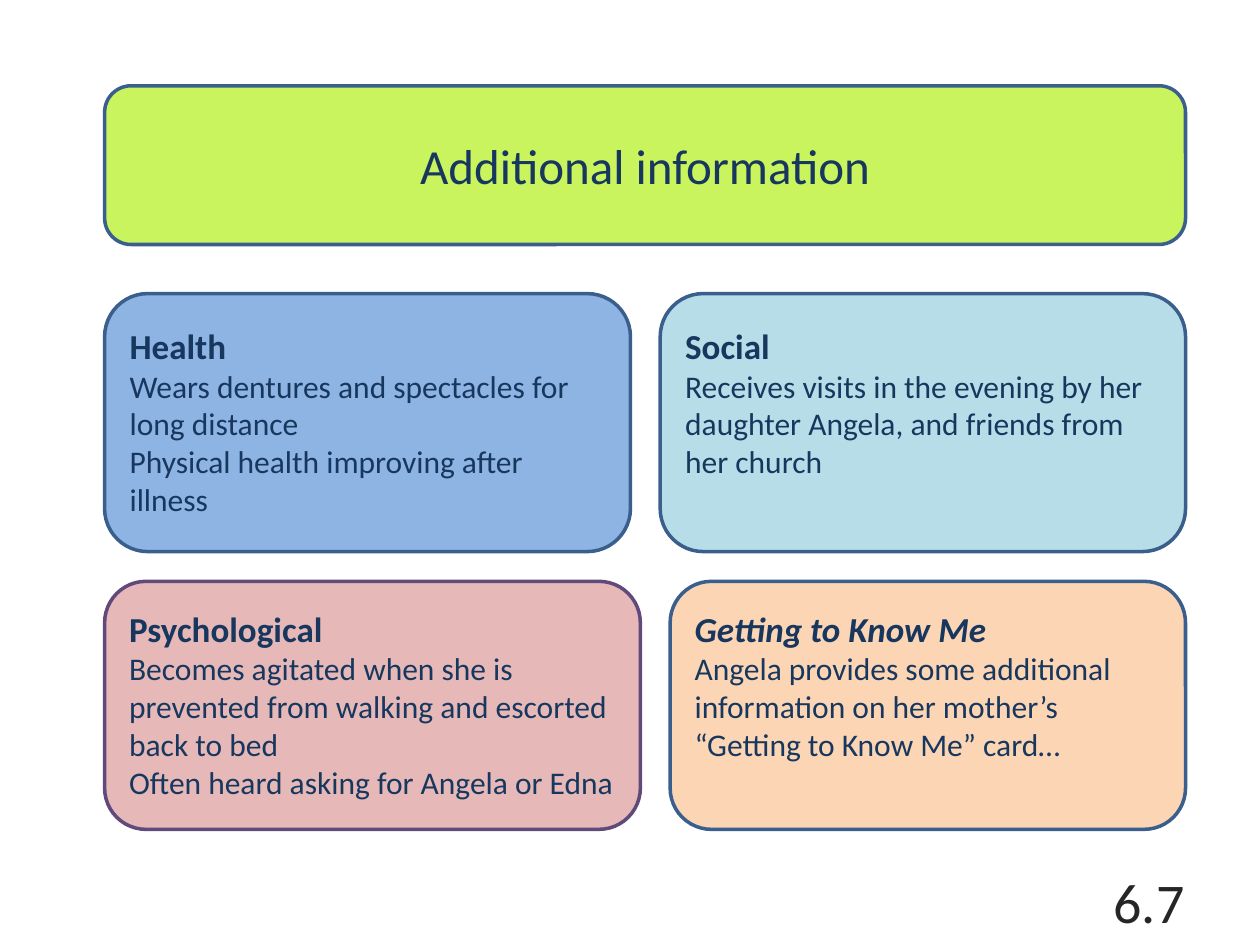
from pptx import Presentation
from pptx.dml.color import RGBColor
from pptx.enum.shapes import MSO_SHAPE
from pptx.enum.text import MSO_ANCHOR, PP_ALIGN
from pptx.util import Cm, Pt

COLORS = {
    "navy": "17375E", "outline": "3A5F8C", "purple": "604A7B", "dark": "262626",
    "lime": "C9F45E", "blue": "8EB4E3", "aqua": "B7DEE8",
    "rose": "E6B9B8", "peach": "FCD5B5",
}
FONT = "Calibri"

# Content
TITLE = "Additional information"
PAGE_LABEL = "6.7"
# Each row: height, width of its left card, text inset at the top (cm), cards
ROWS = [
    (5.2, 10.6, 0.37, [
        {"heading": "Health", "fill": "blue", "lines": [
            "Wears dentures and spectacles for long distance",
            "Physical health improving after illness"]},
        {"heading": "Social", "fill": "aqua", "lines": [
            "Receives visits in the evening by her daughter Angela, "
            "and friends from her church"]},
    ]),
    (5.0, 10.8, 0.28, [
        {"heading": "Psychological", "fill": "rose", "line": "purple", "lines": [
            "Becomes agitated when she is prevented from walking "
            "and escorted back to bed",
            "Often heard asking for Angela or Edna"]},
        {"heading": "Getting to Know Me", "fill": "peach", "italic": True, "lines": [
            "Angela provides some additional information on her mother’s "
            "“Getting to Know Me” card…"]},
    ]),
]

# Layout in cm
LEFT, WIDTH, GAP = 2.11, 21.79, 0.6
TITLE_TOP, TITLE_HEIGHT = 1.73, 3.2
ROWS_TOP = 5.92


def color(name):
    return RGBColor.from_string(COLORS[name])


def add_box(slide, left, top, width, height, fill, line="outline"):
    shape = slide.shapes.add_shape(
        MSO_SHAPE.ROUNDED_RECTANGLE, Cm(left), Cm(top), Cm(width), Cm(height))
    shape.shadow.inherit = False
    shape.fill.solid()
    shape.fill.fore_color.rgb = color(fill)
    shape.line.color.rgb = color(line)
    shape.line.width = Pt(2)
    shape.text_frame.word_wrap = True
    return shape.text_frame


def write(paragraph, text, size, align=PP_ALIGN.LEFT, ink="navy",
          bold=False, italic=False):
    paragraph.alignment = align
    run = paragraph.add_run()
    run.text = text
    run.font.name = FONT
    run.font.size = Pt(size)
    run.font.bold = bold
    run.font.italic = italic
    run.font.color.rgb = color(ink)


def add_card(slide, card, left, top, width, height, inset):
    frame = add_box(slide, left, top, width, height,
                    card["fill"], card.get("line", "outline"))
    frame.vertical_anchor = MSO_ANCHOR.TOP
    frame.margin_top, frame.margin_bottom = Cm(inset), 0
    write(frame.paragraphs[0], card["heading"], 20,
          bold=True, italic=card.get("italic", False))
    for line in card["lines"]:
        write(frame.add_paragraph(), line, 18)


def main():
    presentation = Presentation()
    presentation.slide_width, presentation.slide_height = Cm(25.4), Cm(19.05)
    slide = presentation.slides.add_slide(presentation.slide_layouts[6])

    # Title banner
    frame = add_box(slide, LEFT, TITLE_TOP, WIDTH, TITLE_HEIGHT, "lime")
    frame.vertical_anchor = MSO_ANCHOR.MIDDLE
    write(frame.paragraphs[0], TITLE, 28, PP_ALIGN.CENTER)

    # Cards, two to a row; the right one fills the remaining width
    top = ROWS_TOP
    for height, left_width, inset, cards in ROWS:
        left = LEFT
        for card, width in zip(cards, (left_width, WIDTH - left_width - GAP)):
            add_card(slide, card, left, top, width, height, inset)
            left += width + GAP
        top += height + GAP

    # Page label
    label = slide.shapes.add_textbox(Cm(18.2), Cm(17.66), Cm(5.93), Cm(1.01))
    label.text_frame.word_wrap = True
    label.text_frame.vertical_anchor = MSO_ANCHOR.MIDDLE
    write(label.text_frame.paragraphs[0], PAGE_LABEL, 32, PP_ALIGN.RIGHT, "dark")

    presentation.save("out.pptx")


if __name__ == "__main__":
    main()
